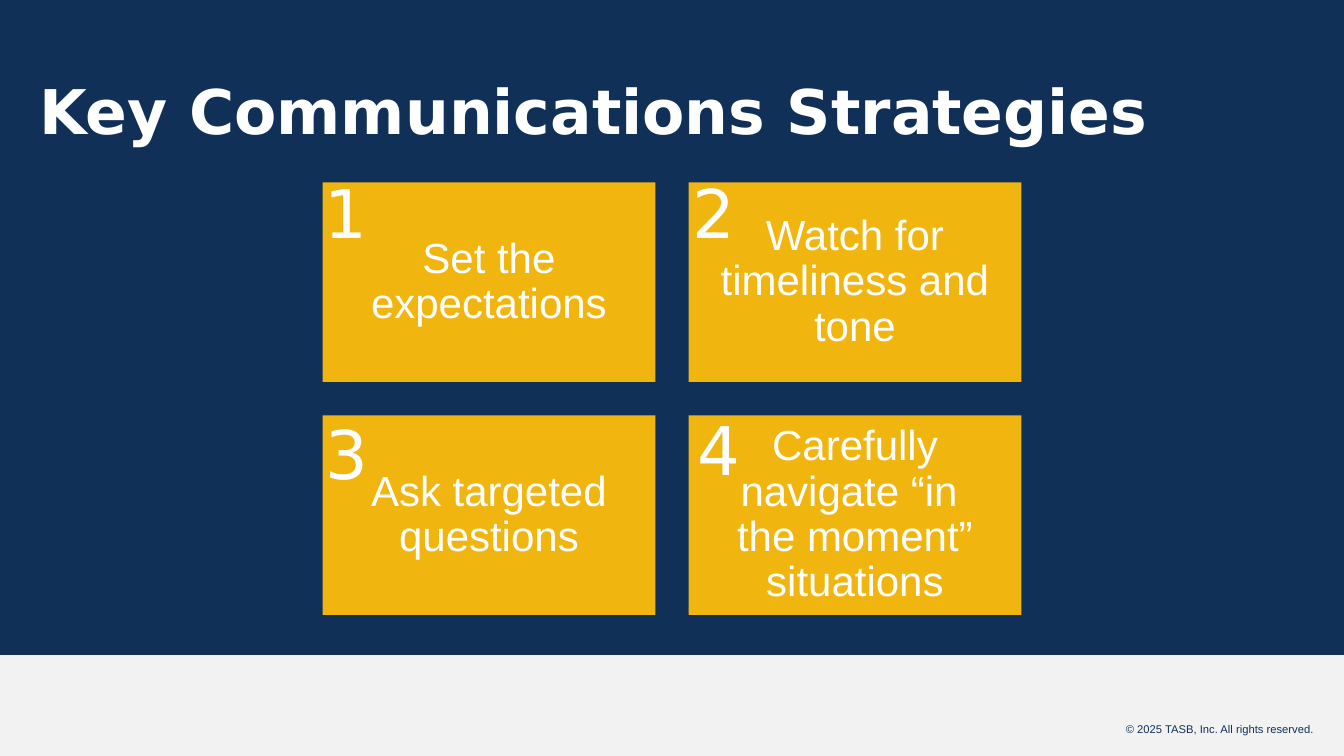
from pptx import Presentation
from pptx.dml.color import RGBColor
from pptx.enum.shapes import MSO_SHAPE
from pptx.enum.text import MSO_ANCHOR, PP_ALIGN
from pptx.util import Inches, Pt

WIDTH, HEIGHT = 13.33, 7.5
COLORS = {"navy": "113058", "gold": "F0B50E", "gray": "F2F2F2", "white": "FFFFFF"}
STRATEGIES = [
    ("Set the expectations", (-0.08, -0.16)),
    ("Watch for timeliness and tone", (-0.06, -0.16)),
    ("Ask targeted questions", (-0.07, -0.08)),
    ("Carefully navigate “in \vthe moment” situations", (-0.01, -0.12)),
]


def rgb(name):
    return RGBColor.from_string(COLORS[name])


def add_rect(s, box, color):
    sp = s.shapes.add_shape(MSO_SHAPE.RECTANGLE, *map(Inches, box))
    sp.shadow.inherit = False
    sp.fill.solid()
    sp.fill.fore_color.rgb = rgb(color)
    sp.line.fill.background()
    return sp


def write(sp, text, size, font="Arial", color="white", align=PP_ALIGN.LEFT,
          anchor=MSO_ANCHOR.TOP, spacing=1.0, bold=False):
    tf = sp.text_frame
    tf.word_wrap = True
    tf.vertical_anchor = anchor
    p = tf.paragraphs[0]
    p.text = text
    p.alignment = align
    p.line_spacing = spacing
    p.font.size = Pt(size)
    p.font.name = font
    p.font.bold = bold
    p.font.color.rgb = rgb(color)
    return tf


def add_text(s, box, text, size, **style):
    sp = s.shapes.add_textbox(*map(Inches, box))
    return write(sp, text, size, **style)


def add_footer(s, box):
    x, y, w, h = box
    add_rect(s, box, "gray")
    add_text(s, (x + w - 3.2, y + 0.62, 3, 0.24),
             "© 2025 TASB, Inc. All rights reserved.", 8,
             color="navy", align=PP_ALIGN.RIGHT)


def add_title(s, box):
    add_text(s, box, "Key Communications Strategies", 44, font="DejaVu Sans",
             anchor=MSO_ANCHOR.MIDDLE, spacing=0.9, bold=True)


def add_card(s, box, number, text, offset):
    x, y = box[:2]
    dx, dy = offset
    card = add_rect(s, box, "gold")
    tf = write(card, text, 30, align=PP_ALIGN.CENTER,
               anchor=MSO_ANCHOR.MIDDLE, spacing=0.9)
    tf.margin_left = tf.margin_right = Inches(0.12)
    tf.margin_top = tf.margin_bottom = Inches(0.12)
    add_text(s, (x + dx, y + dy, 0.8, 0.91), str(number), 48, font="DejaVu Sans")


def add_cards(s, box, columns=2, gap=0.33):
    x, y, w, h = box
    rows = len(STRATEGIES) // columns
    card_w = (w - gap * (columns - 1)) / columns
    card_h = (h - gap * (rows - 1)) / rows
    for i, (text, offset) in enumerate(STRATEGIES):
        row, col = divmod(i, columns)
        card_box = (x + col * (card_w + gap), y + row * (card_h + gap), card_w, card_h)
        add_card(s, card_box, i + 1, text, offset)


def main():
    prs = Presentation()
    prs.slide_width, prs.slide_height = Inches(WIDTH), Inches(HEIGHT)
    s = prs.slides.add_slide(prs.slide_layouts[6])
    s.background.fill.solid()
    s.background.fill.fore_color.rgb = rgb("navy")
    add_footer(s, (0, HEIGHT - 1, WIDTH, 1))
    add_title(s, (0.29, 0.41, WIDTH - 0.58, 1.45))
    add_cards(s, (3.2, 1.81, WIDTH - 6.4, 4.29))
    prs.save("out.pptx")


if __name__ == "__main__":
    main()
